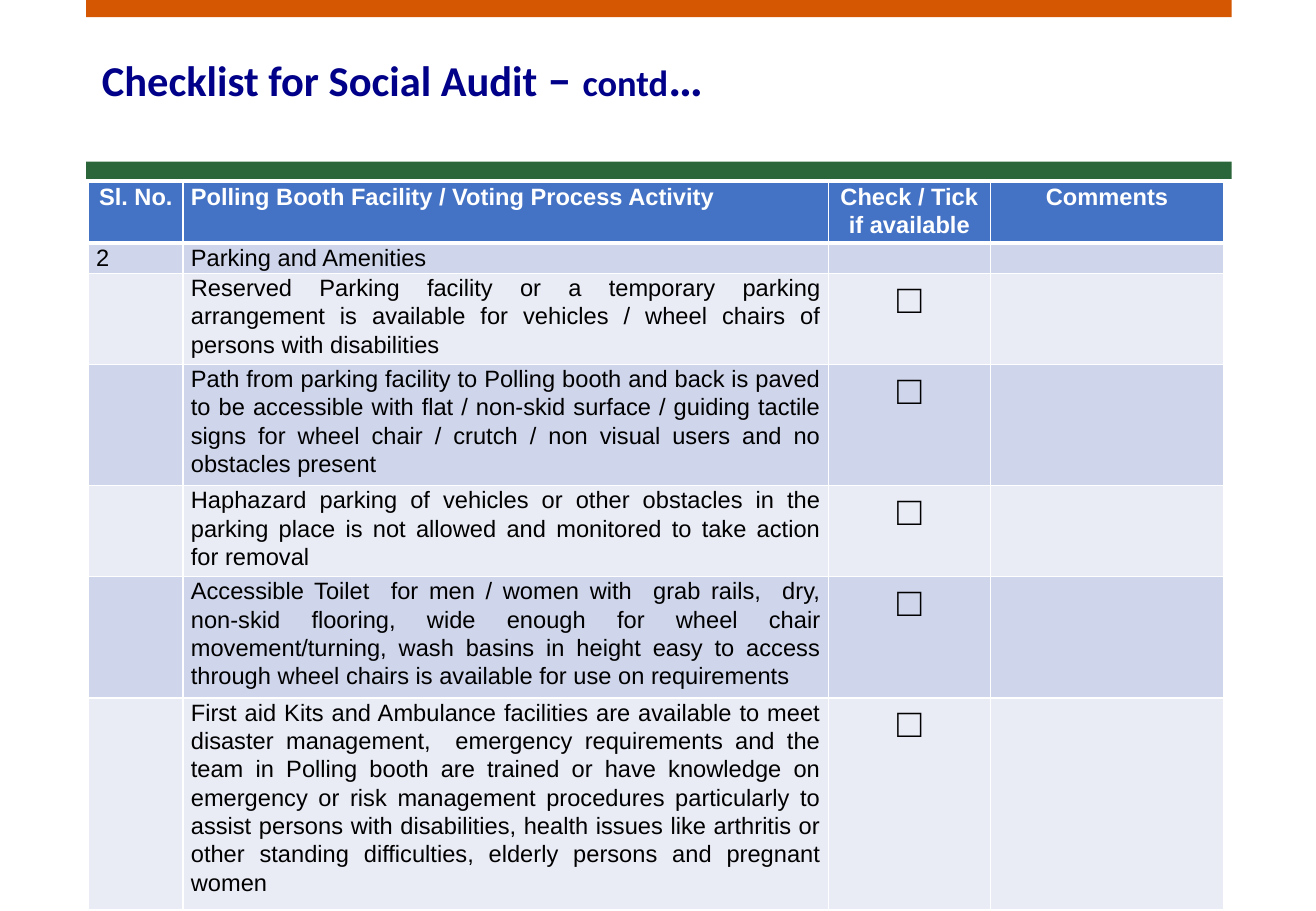
import pptx
import pptx.util
import pptx.dml.color
import pptx.enum.shapes
import pptx.enum.text
import pptx.oxml.xmlchemy

Cm = pptx.util.Cm
Pt = pptx.util.Pt
RGBColor = pptx.dml.color.RGBColor
ALIGN = pptx.enum.text.PP_ALIGN
ANCHOR = pptx.enum.text.MSO_ANCHOR

ORANGE = RGBColor(0xD5, 0x57, 0x02)
GREEN = RGBColor(0x2B, 0x66, 0x3A)
NAVY = RGBColor(0x00, 0x00, 0x88)
BLUE = RGBColor(0x44, 0x72, 0xC4)
DARK = RGBColor(0xCF, 0xD5, 0xEA)
LIGHT = RGBColor(0xE9, 0xEB, 0xF5)
WHITE = RGBColor(0xFF, 0xFF, 0xFF)
BLACK = RGBColor(0x00, 0x00, 0x00)

TITLE = [("Checklist for Social Audit ", 25.2), ("– ", 28.8), ("contd", 21.6), ("…", 28.8)]
HEADS = ["Sl. No.", "Polling Booth Facility / Voting Process Activity",
         "Check / Tick\nif available", "Comments"]
ITEMS = [
    "Reserved Parking facility or a temporary parking arrangement is available for "
    "vehicles / wheel chairs of persons with disabilities ",
    "Path from parking facility to Polling booth and back is paved to be accessible with "
    "flat / non-skid surface / guiding tactile signs for wheel chair / crutch / non visual "
    "users and no obstacles present",
    "Haphazard parking of vehicles or other obstacles in the parking place is not allowed "
    "and monitored to take action for removal",
    "Accessible Toilet  for men / women with  grab rails,  dry, non-skid flooring, wide "
    "enough for wheel chair movement/turning, wash basins in height easy to access through "
    "wheel chairs is available for use on requirements",
    "First aid Kits and Ambulance facilities are available to meet disaster management,  "
    "emergency requirements and the team in Polling booth are trained or have knowledge on "
    "emergency or risk management procedures particularly to assist persons with "
    "disabilities, health issues like arthritis or other standing difficulties, elderly "
    "persons and pregnant women",
]
ROWS = [HEADS, ["2", "Parking and Amenities", "", ""]] + [["", item, "□", ""] for item in ITEMS]
WIDTHS = [1.98, 13.49, 3.38, 4.88]
HEIGHTS = [1.22, 0.61, 1.47, 2.16, 1.85, 2.46, 3.73]


def write(para, text, size=14, font="Arial", color=BLACK, bold=False, align=None, gap=1.07):
    """Add one formatted run to a paragraph."""
    para.alignment = align
    para.line_spacing = gap
    run = para.add_run()
    run.text = text
    run.font.size = Pt(size)
    run.font.name = font
    run.font.bold = bold
    run.font.color.rgb = color


def add_bar(slide, top, color):
    """Draw a full-width coloured bar."""
    bar = slide.shapes.add_shape(pptx.enum.shapes.MSO_SHAPE.RECTANGLE,
                                 Cm(1.8), Cm(top), Cm(23.95), Cm(0.36))
    bar.shadow.inherit = False
    bar.fill.solid()
    bar.fill.fore_color.rgb = color
    bar.line.fill.background()


def add_title(slide):
    """Place the title with its mixed sizes."""
    box = slide.shapes.add_textbox(Cm(1.88), Cm(1.02), Cm(23.72), Cm(1.32))
    frame = box.text_frame
    frame.word_wrap = True
    frame.vertical_anchor = ANCHOR.MIDDLE
    for text, size in TITLE:
        write(frame.paragraphs[0], text, size=size, font="Calibri", color=NAVY,
              bold=True, gap=0.9)


def add_edges(cell, base):
    """Give a cell white borders, with the base width in points."""
    props = cell._tc.get_or_add_tcPr()
    for spot, (side, width) in enumerate([("L", 1), ("R", 1), ("T", 1), ("B", base)]):
        line = pptx.oxml.xmlchemy.OxmlElement(f"a:ln{side}")
        line.set("w", str(Pt(width)))
        fill = pptx.oxml.xmlchemy.OxmlElement("a:solidFill")
        color = pptx.oxml.xmlchemy.OxmlElement("a:srgbClr")
        color.set("val", str(WHITE))
        fill.append(color)
        line.append(fill)
        props.insert(spot, line)


def set_blank(cell):
    """Keep an empty cell at the body text size."""
    end = pptx.oxml.xmlchemy.OxmlElement("a:endParaRPr")
    end.set("sz", "1400")
    cell.text_frame.paragraphs[0]._p.append(end)


def fill_cell(cell, text, row, col):
    """Style a cell by its place in the table and write its text."""
    head = row == 0
    cell.margin_left = cell.margin_right = Cm(0.16)
    cell.margin_top = cell.margin_bottom = 0
    cell.fill.solid()
    cell.fill.fore_color.rgb = BLUE if head else DARK if row % 2 else LIGHT
    add_edges(cell, 3 if head else 1)
    if not text:
        set_blank(cell)
        return
    align = ALIGN.JUSTIFY if col == 1 else ALIGN.CENTER if head or col == 2 else ALIGN.LEFT
    frame = cell.text_frame
    for num, part in enumerate(text.split("\n")):
        para = frame.add_paragraph() if num else frame.paragraphs[0]
        write(para, part, size=24 if part == "□" else 14,
              color=WHITE if head else BLACK, bold=head, align=align)


def add_list(slide):
    """Build the checklist table."""
    table = slide.shapes.add_table(len(ROWS), len(WIDTHS), Cm(1.85), Cm(3.81),
                                   Cm(sum(WIDTHS)), Cm(sum(HEIGHTS))).table
    for col, width in enumerate(WIDTHS):
        table.columns[col].width = Cm(width)
    for row, height in enumerate(HEIGHTS):
        table.rows[row].height = Cm(height)
        for col, text in enumerate(ROWS[row]):
            fill_cell(table.cell(row, col), text, row, col)


def main():
    """Build the slide and save it."""
    deck = pptx.Presentation()
    deck.slide_width = Cm(27.51)
    deck.slide_height = Cm(19.05)
    slide = deck.slides.add_slide(deck.slide_layouts[6])
    add_bar(slide, 0, ORANGE)
    add_bar(slide, 3.38, GREEN)
    add_title(slide)
    add_list(slide)
    deck.save("out.pptx")


if __name__ == "__main__":
    main()
